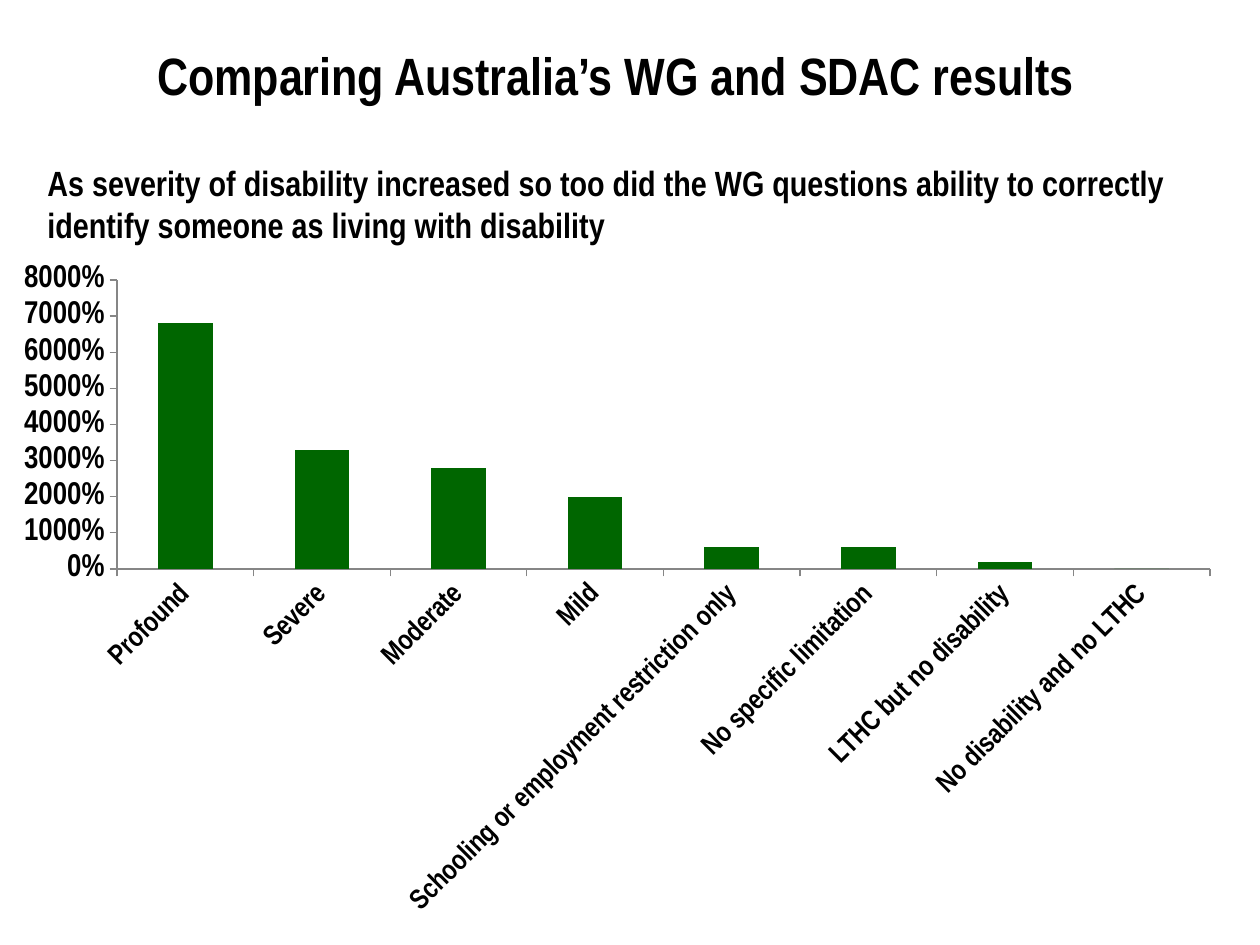
"""Build a slide comparing WG and SDAC disability identification by severity."""
import pptx
import pptx.chart.data
import pptx.dml.color
import pptx.enum.chart
import pptx.enum.text
import pptx.oxml
import pptx.oxml.ns
import pptx.util

PX = 914400 / 126
THEME = {
    "font": "Arial Narrow",
    "text": pptx.dml.color.RGBColor.from_string("000000"),
    "bar": pptx.dml.color.RGBColor.from_string("006600"),
    "axis": pptx.dml.color.RGBColor.from_string("868686"),
    "title": 30,
    "subtitle": 20,
    "value_labels": 18,
    "category_labels": 16,
}


def box(*lengths):
    return [pptx.util.Emu(round(length * PX)) for length in lengths]


def style_font(font, size):
    values = {"name": THEME["font"], "size": pptx.util.Pt(THEME[size]), "bold": True}
    for name, value in values.items():
        setattr(font, name, value)
    font.color.rgb = THEME["text"]


presentation = pptx.Presentation()
presentation.slide_width, presentation.slide_height = box(1260, 945)
slide = presentation.slides.add_slide(presentation.slide_layouts[6])

severity_results = {
    "Profound": 68,
    "Severe": 33,
    "Moderate": 28,
    "Mild": 20,
    "Schooling or employment restriction only": 6,
    "No specific limitation": 6,
    "LTHC but no disability": 2,
    "No disability and no LTHC": 0,
}
texts = [
    ("As severity of disability increased so too did the WG questions ability to correctly \v"
     "identify someone as living with disability", "subtitle", (35, 155, 1157, 97), False),
    ("Comparing Australia’s WG and SDAC results", "title", (145, 37, 1022, 77), True),
]
for text, size, position, wrap in texts:
    shape = slide.shapes.add_textbox(*box(*position))
    shape.text_frame.word_wrap = wrap
    shape.text_frame.auto_size = pptx.enum.text.MSO_AUTO_SIZE.SHAPE_TO_FIT_TEXT
    paragraph = shape.text_frame.paragraphs[0]
    paragraph.text = text
    style_font(paragraph.font, size)
    for run in paragraph.runs:
        style_font(run.font, size)

chart_data = pptx.chart.data.CategoryChartData(number_format="0")
chart_data.categories = list(severity_results)
chart_data.add_series("Series 1", list(severity_results.values()))
chart = slide.shapes.add_chart(
    pptx.enum.chart.XL_CHART_TYPE.COLUMN_CLUSTERED, *box(0, 252, 1235, 677), chart_data
).chart
chart.has_legend = False
chart.has_title = False
style_font(chart.font, "category_labels")

plot = chart.plots[0]
plot.gap_width = 150
plot.vary_by_categories = False
fill = plot.series[0].format.fill
fill.solid()
fill.fore_color.rgb = THEME["bar"]

for axis, size in [(chart.category_axis, "category_labels"), (chart.value_axis, "value_labels")]:
    axis.has_major_gridlines = False
    axis.major_tick_mark = pptx.enum.chart.XL_TICK_MARK.OUTSIDE
    axis.minor_tick_mark = pptx.enum.chart.XL_TICK_MARK.NONE
    axis.format.line.color.rgb = THEME["axis"]
    axis.format.line.width = pptx.util.Pt(0.75)
    style_font(axis.tick_labels.font, size)

value_scale = {"minimum_scale": 0, "maximum_scale": 80, "major_unit": 10}
for name, value in value_scale.items():
    setattr(chart.value_axis, name, value)
chart.value_axis.tick_labels.number_format = "0%"
chart.value_axis.tick_labels.number_format_is_linked = False

label_body = chart.category_axis._element.find(".//" + pptx.oxml.ns.qn("a:bodyPr"))
label_body.set("rot", "-2700000")
label_body.set("vert", "horz")

plot_area = chart._chartSpace.find(".//" + pptx.oxml.ns.qn("c:plotArea"))
for layout in plot_area.findall(pptx.oxml.ns.qn("c:layout")):
    plot_area.remove(layout)
plot_layout = {"layoutTarget": "inner", "xMode": "edge", "yMode": "edge",
               "x": 117 / 1235, "y": 28 / 677, "w": 1093 / 1235, "h": 289 / 677}
settings = "".join(f'<c:{name} val="{value}"/>' for name, value in plot_layout.items())
plot_area.insert(0, pptx.oxml.parse_xml(
    f'<c:layout {pptx.oxml.ns.nsdecls("c")}><c:manualLayout>{settings}</c:manualLayout></c:layout>'
))

presentation.save("out.pptx")
